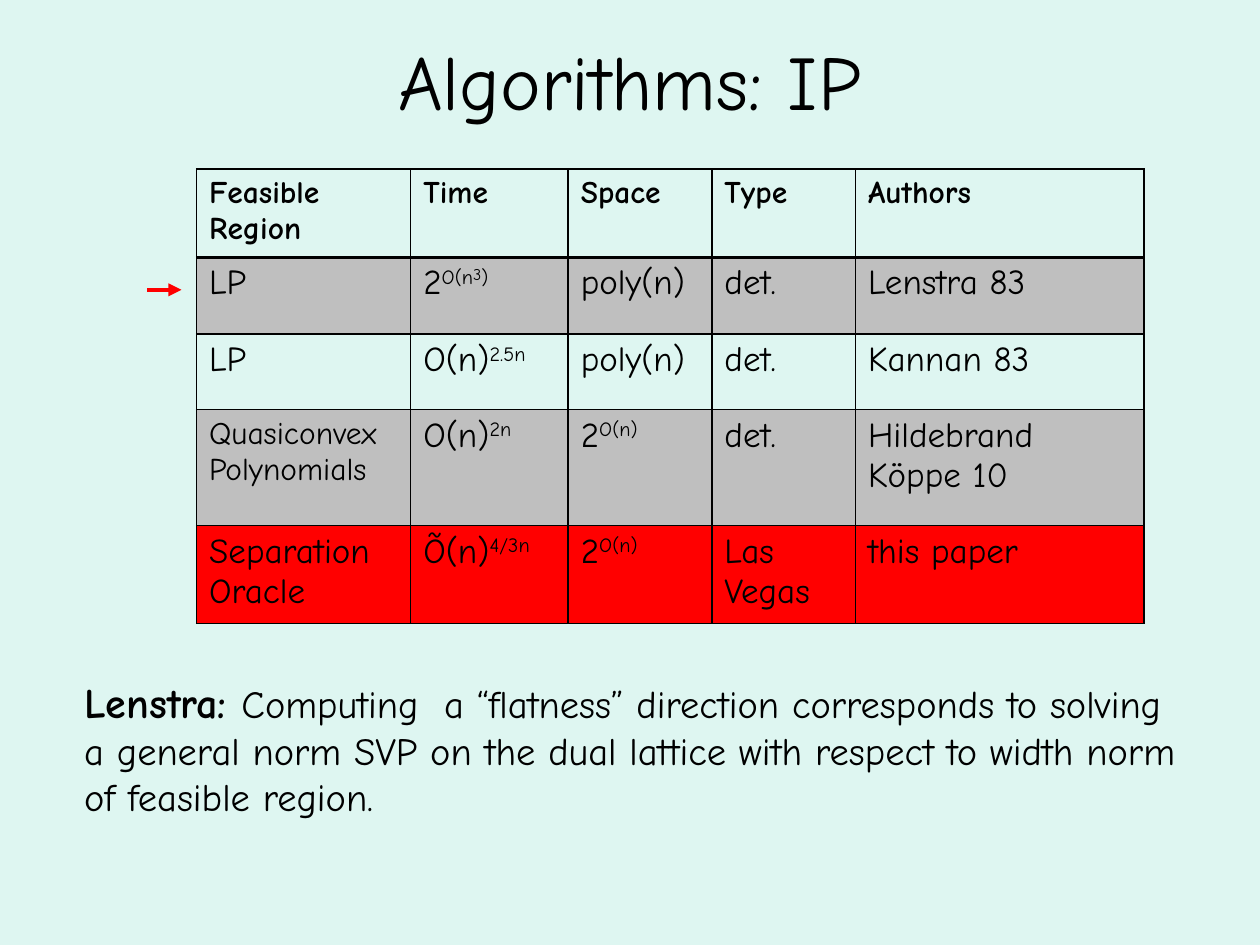
from lxml.etree import SubElement
from pptx import Presentation
from pptx.dml.color import RGBColor
from pptx.enum.shapes import MSO_CONNECTOR
from pptx.enum.text import MSO_ANCHOR, PP_ALIGN
from pptx.oxml.ns import qn
from pptx.util import Inches, Pt

FONT = "Comic Neue"
COLORS = {"bg": "DEF6F1", "text": "000000", "gray": "BFBFBF", "red": "FF0000"}

TITLE = "Algorithms: IP"
HEADER = ["Feasible Region", "Time", "Space", "Type", "Authors"]
UP, UP_UP = 30, 50
EXP_SPACE = [("2", 0), ("O(n)", UP)]
ROWS = [
    ["LP", [("2", 0), ("O(n", UP), ("3", UP_UP), (")", UP)], "poly(n)", "det.", "Lenstra 83"],
    ["LP", [("O(n)", 0), ("2.5n", UP)], "poly(n)", "det.", "Kannan 83"],
    ["Quasiconvex Polynomials", [("O(n)", 0), ("2n", UP)], EXP_SPACE, "det.",
     "Hildebrand Köppe 10"],
    ["Separation Oracle", [("Õ(n)", 0), ("4/3n", UP)], EXP_SPACE, "Las Vegas", "this paper"],
]
FILLS = [None, "gray", None, "gray", "red"]
COL_WIDTHS = [1.7, 1.25, 1.14, 1.14, 2.29]
ROW_HEIGHTS = [0.67, 0.61, 0.6, 0.92, 0.78]
SMALL_CELLS = {"Quasiconvex Polynomials"}
NOTE = [
    ("Lenstra: ", 24, True),
    ("Computing  a “flatness” direction corresponds to solving a general norm SVP "
     "on the dual lattice with respect to width norm of feasible region.", 22, False),
]


def rgb(name):
    return RGBColor.from_string(COLORS[name])


def add_run(p, text, size, bold=False, baseline=0):
    r = p.add_run()
    r.text = text
    r.font.name = FONT
    r.font.size = Pt(size)
    r.font.bold = bold
    r.font.color.rgb = rgb("text")
    if baseline:
        r._r.get_or_add_rPr().set("baseline", str(baseline * 1000))


def add_text(slide, box, runs, align, anchor):
    tf = slide.shapes.add_textbox(*map(Inches, box)).text_frame
    tf.word_wrap = True
    tf.vertical_anchor = anchor
    p = tf.paragraphs[0]
    p.alignment = align
    for text, size, bold in runs:
        add_run(p, text, size, bold)


def set_borders(cell, top, bottom):
    tc_pr = cell._tc.get_or_add_tcPr()
    for side, width in (("L", 1), ("R", 1), ("T", top), ("B", bottom)):
        ln = SubElement(tc_pr, qn(f"a:ln{side}"), w=str(Pt(width)))
        fill = SubElement(ln, qn("a:solidFill"))
        SubElement(fill, qn("a:srgbClr"), val=COLORS["text"])


def fill_cell(cell, content, i):
    header = i == 0
    set_borders(cell, 2 if i == 1 else 1, 2 if header else 1)
    if FILLS[i]:
        cell.fill.solid()
        cell.fill.fore_color.rgb = rgb(FILLS[i])
    else:
        cell.fill.background()
    p = cell.text_frame.paragraphs[0]
    p.alignment = PP_ALIGN.LEFT
    if isinstance(content, str):
        size = 18 if header or content in SMALL_CELLS else 20
        add_run(p, content, size, header)
    else:
        for text, baseline in content:
            add_run(p, text, 16 if baseline == UP_UP else 20, False, baseline)


def add_algorithms(slide):
    rows = [HEADER] + ROWS
    table = slide.shapes.add_table(
        len(rows), len(HEADER), Inches(1.56), Inches(1.34),
        Inches(sum(COL_WIDTHS)), Inches(sum(ROW_HEIGHTS))).table
    table.first_row = table.horz_banding = False
    for col, width in zip(table.columns, COL_WIDTHS):
        col.width = Inches(width)
    for i, (row, height) in enumerate(zip(rows, ROW_HEIGHTS)):
        table.rows[i].height = Inches(height)
        for j, content in enumerate(row):
            fill_cell(table.cell(i, j), content, i)


def add_arrow(slide):
    y = Inches(2.3)
    line = slide.shapes.add_connector(
        MSO_CONNECTOR.STRAIGHT, Inches(1.17), y, Inches(1.44), y)
    line.line.color.rgb = rgb("red")
    line.line.width = Pt(2.5)
    SubElement(line.line._get_or_add_ln(), qn("a:tailEnd"), type="triangle")
    SubElement(line._element.spPr, qn("a:effectLst"))


def main():
    prs = Presentation()
    prs.slide_width, prs.slide_height = Inches(10), Inches(7.5)
    slide = prs.slides.add_slide(prs.slide_layouts[6])
    slide.background.fill.solid()
    slide.background.fill.fore_color.rgb = rgb("bg")
    add_text(slide, (0.5, 0.01, 9, 1.25), [(TITLE, 44, False)],
             PP_ALIGN.CENTER, MSO_ANCHOR.MIDDLE)
    add_algorithms(slide)
    add_text(slide, (0.57, 5.32, 8.95, 1.25), NOTE, PP_ALIGN.LEFT, MSO_ANCHOR.TOP)
    add_arrow(slide)
    prs.save("out.pptx")


if __name__ == "__main__":
    main()
